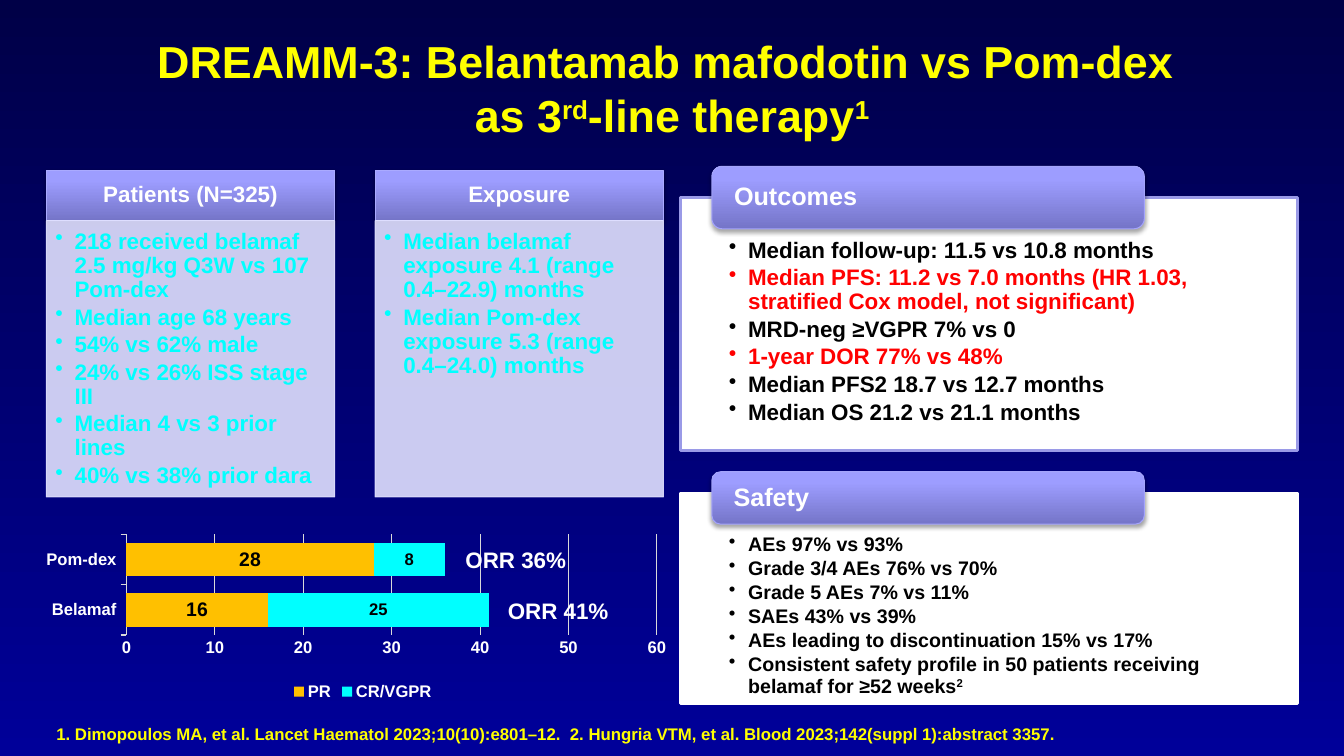
from copy import deepcopy
from dataclasses import dataclass

from lxml.etree import SubElement
from pptx import Presentation
from pptx.chart.data import CategoryChartData
from pptx.dml.color import RGBColor
from pptx.enum.chart import XL_CHART_TYPE, XL_LEGEND_POSITION, XL_TICK_MARK
from pptx.enum.shapes import MSO_SHAPE
from pptx.enum.text import MSO_ANCHOR, PP_ALIGN
from pptx.oxml import parse_xml
from pptx.oxml.ns import nsdecls, qn
from pptx.util import Inches, Pt


@dataclass(frozen=True)
class Theme:
    font: str = "Arial"
    yellow: str = "FFFF00"
    white: str = "FFFFFF"
    black: str = "000000"
    red: str = "FF0000"
    cyan: str = "00FFFF"
    amber: str = "FFC000"
    grid: str = "D9D9D9"
    lilac: str = "E2E2FF"
    card_edge: str = "9A9AE7"
    header_edge: str = "AAAAFF"
    tab_edge: str = "A4A4FB"
    header_stops: tuple = ((0, "7575C8"), (0.8, "9D9DFF"), (1, "9F9FFF"))
    sky_stops: tuple = ((0, "000047"), (1, "000099"))
    title: int = 32
    tab: int = 18
    body: int = 16
    small: int = 14
    note: int = 12


THEME = Theme()


def style_font(font, size, color):
    font.name = THEME.font
    font.size = Pt(size)
    font.bold = True
    font.color.rgb = RGBColor.from_string(color)


def paint_gradient(fill, owner, stops, angle):
    """Fill with any number of stops; owner is the XML element holding the fill."""
    fill.gradient()
    fill.gradient_angle = angle
    stop_list = owner.xpath(".//a:gsLst")[0]
    while len(stop_list) < len(stops):
        stop_list.append(deepcopy(stop_list[-1]))
    for stop, (position, color) in zip(fill.gradient_stops, stops):
        stop.color.rgb = RGBColor.from_string(color)
        stop.position = position


def set_line(line, color, width):
    line.color.rgb = RGBColor.from_string(color)
    line.width = Pt(width)


def add_bullet(para):
    properties = para._p.get_or_add_pPr()
    properties.set("marL", str(Inches(0.19)))
    properties.set("indent", str(-Inches(0.19)))
    SubElement(properties, qn("a:buChar"), char="•")


def add_text(para, text, size=THEME.body, color=THEME.white, align=PP_ALIGN.LEFT,
             bullet=False, line_spacing=None, after=0):
    """Write one paragraph; parts between ^ marks are raised."""
    if bullet:
        add_bullet(para)
    para.alignment = align
    para.line_spacing = line_spacing
    para.space_after = Pt(after)
    for number, line in enumerate(text.split("\n")):
        if number:
            para.add_line_break()
        for index, part in enumerate(line.split("^")):
            if not part:
                continue
            span = para.add_run()
            span.text = part
            style_font(span.font, size, color)
            if index % 2:
                span._r.get_or_add_rPr().set("baseline", "30000")


def set_frame(frame, insets, anchor):
    frame.word_wrap = True
    frame.vertical_anchor = anchor
    (frame.margin_left, frame.margin_top,
     frame.margin_right, frame.margin_bottom) = map(Inches, insets)


def add_bullets(box, items, insets, size, color):
    """Fill a box with bullets; an item starting with ! is shown in red."""
    frame = box.text_frame
    set_frame(frame, insets, MSO_ANCHOR.TOP)
    for index, item in enumerate(items):
        para = frame.add_paragraph() if index else frame.paragraphs[0]
        add_text(para, item.lstrip("!"), size=size, bullet=True, line_spacing=0.9,
                 color=THEME.red if item.startswith("!") else color, after=size * 0.15)


def add_box(slide, place, kind=MSO_SHAPE.RECTANGLE):
    box = slide.shapes.add_shape(kind, *map(Inches, place))
    box.shadow.inherit = False
    return box


def add_header(slide, place, text, kind, edge, size, align, insets):
    box = add_box(slide, place, kind)
    paint_gradient(box.fill, box._element.spPr, THEME.header_stops, 90)
    set_line(box.line, edge, 0.75)
    effects = box._element.spPr.find(qn("a:effectLst"))
    effects.append(parse_xml(
        f'<a:outerShdw {nsdecls("a")} blurRad="{Pt(3.1)}" dist="{Pt(1.8)}" dir="5400000"'
        ' rotWithShape="0"><a:srgbClr val="000000"><a:alpha val="35000"/></a:srgbClr>'
        '</a:outerShdw>'))
    set_frame(box.text_frame, insets, MSO_ANCHOR.MIDDLE)
    add_text(box.text_frame.paragraphs[0], text, size=size, align=align, line_spacing=0.9)


def add_column(slide, left, heading, items):
    add_header(slide, (left, 1.69, 2.86, 0.5), heading, MSO_SHAPE.RECTANGLE,
               THEME.header_edge, THEME.body, PP_ALIGN.CENTER, (0.12, 0.07, 0.12, 0.07))
    box = add_box(slide, (left, 2.19, 2.86, 2.74))
    box.fill.solid()
    box.fill.fore_color.rgb = RGBColor.from_string(THEME.lilac)
    set_line(box.line, THEME.lilac, 0.75)
    for color in box._element.spPr.iter(qn("a:srgbClr")):
        SubElement(color, qn("a:alpha"), val="90000")
    add_bullets(box, items, (0.09, 0.09, 0.12, 0.14), THEME.body, THEME.cyan)


def add_card(slide, top, height, tab_top, tab_height, heading, items, size, edge):
    box = add_box(slide, (6.75, top, 6.12, height))
    box.fill.solid()
    box.fill.fore_color.rgb = RGBColor.from_string(THEME.white)
    set_line(box.line, edge, 2)
    add_bullets(box, items, (0.48, 0.41, 0.48, 0.14), size, THEME.black)
    add_header(slide, (7.06, tab_top, 4.29, tab_height), heading,
               MSO_SHAPE.ROUNDED_RECTANGLE, THEME.tab_edge, THEME.tab,
               PP_ALIGN.LEFT, (0.19, 0.03, 0.19, 0.03))


def add_label(slide, place, text, anchor=MSO_ANCHOR.TOP, **text_format):
    box = slide.shapes.add_textbox(*map(Inches, place))
    set_frame(box.text_frame, (0.1, 0.05, 0.1, 0.05), anchor)
    add_text(box.text_frame.paragraphs[0], text, **text_format)


def set_plot_area(chart, **fractions):
    plot_area = chart._chartSpace.chart.plotArea
    for layout in plot_area.findall(qn("c:layout")):
        plot_area.remove(layout)
    values = "".join(f'<c:{key} val="{value:.3f}"/>' for key, value in fractions.items())
    plot_area.insert(0, parse_xml(
        f'<c:layout {nsdecls("c")}><c:manualLayout><c:layoutTarget val="inner"/>'
        f'<c:xMode val="edge"/><c:yMode val="edge"/>{values}</c:manualLayout></c:layout>'))


def add_response_chart(slide):
    width, height = 6.21, 1.8
    data = CategoryChartData()
    data.categories = ["Belamaf", "Pom-dex"]
    data.add_series("PR", (16, 28))
    data.add_series("CR/VGPR", (25, 8))
    chart = slide.shapes.add_chart(XL_CHART_TYPE.BAR_STACKED, Inches(0.46), Inches(5.19),
                                   Inches(width), Inches(height), data).chart
    style_font(chart.font, THEME.note, THEME.white)
    chart.has_title = False
    chart.has_legend = True
    chart.legend.position = XL_LEGEND_POSITION.BOTTOM
    chart.legend.include_in_layout = False
    style_font(chart.legend.font, THEME.note, THEME.white)

    plot = chart.plots[0]
    plot.gap_width = 50
    plot.overlap = 100
    plot.vary_by_categories = False
    looks = ((THEME.amber, THEME.small), (THEME.cyan, THEME.note))
    for series, (color, size) in zip(plot.series, looks):
        series.format.fill.solid()
        series.format.fill.fore_color.rgb = RGBColor.from_string(color)
        series.data_labels.show_value = True
        style_font(series.data_labels.font, size, THEME.black)

    groups, scale = chart.category_axis, chart.value_axis
    for axis, tick in ((groups, XL_TICK_MARK.OUTSIDE), (scale, XL_TICK_MARK.NONE)):
        axis.major_tick_mark = tick
        axis.minor_tick_mark = XL_TICK_MARK.NONE
        style_font(axis.tick_labels.font, THEME.note, THEME.white)
    set_line(groups.format.line, THEME.grid, 0.75)
    scale.format.line.fill.background()
    scale.minimum_scale, scale.maximum_scale, scale.major_unit = 0, 60, 10
    scale.has_major_gridlines = True
    set_line(scale.major_gridlines.format.line, THEME.grid, 0.75)
    set_plot_area(chart, x=0.73 / width, y=0.11 / height, w=5.32 / width, h=1 / height)


def main():
    deck = Presentation()
    deck.slide_width, deck.slide_height = Inches(13.33), Inches(7.5)
    slide = deck.slides.add_slide(deck.slide_layouts[6])
    paint_gradient(slide.background.fill, slide._element, THEME.sky_stops, 270)

    add_column(slide, 0.46, "Patients (N=325)", [
        "218 received belamaf 2.5 mg/kg Q3W vs 107 Pom-dex", "Median age 68 years",
        "54% vs 62% male", "24% vs 26% ISS stage III", "Median 4 vs 3 prior lines",
        "40% vs 38% prior dara"])
    add_column(slide, 3.72, "Exposure", [
        "Median belamaf exposure 4.1 (range 0.4–22.9) months",
        "Median Pom-dex exposure 5.3 (range 0.4–24.0) months"])
    add_card(slide, 1.96, 2.51, 1.65, 0.62, "Outcomes", [
        "Median follow-up: 11.5 vs 10.8 months",
        "!Median PFS: 11.2 vs 7.0 months (HR 1.03, stratified Cox model, not significant)",
        "MRD-neg ≥VGPR 7% vs 0", "!1-year DOR 77% vs 48%",
        "Median PFS2 18.7 vs 12.7 months", "Median OS 21.2 vs 21.1 months"],
        THEME.body, THEME.card_edge)
    add_card(slide, 4.89, 2.09, 4.68, 0.52, "Safety", [
        "AEs 97% vs 93%", "Grade 3/4 AEs 76% vs 70%", "Grade 5 AEs 7% vs 11%",
        "SAEs 43% vs 39%", "AEs leading to discontinuation 15% vs 17%",
        "Consistent safety profile in 50 patients receiving belamaf for ≥52 weeks^2^"],
        THEME.small, THEME.white)

    add_label(slide, (0, 0.31, 13.33, 1.12),
              "DREAMM-3: Belantamab mafodotin vs Pom-dex \nas 3^rd^-line therapy^1^",
              MSO_ANCHOR.MIDDLE, size=THEME.title, color=THEME.yellow, align=PP_ALIGN.CENTER)
    add_label(slide, (0.46, 7.02, 12.41, 0.41),
              "1. Dimopoulos MA, et al. Lancet Haematol 2023;10(10):e801–12.  "
              "2. Hungria VTM, et al. Blood 2023;142(suppl 1):abstract 3357.",
              MSO_ANCHOR.BOTTOM, size=THEME.note, color=THEME.yellow)
    add_response_chart(slide)
    for left, top, rate in ((4.17, 5.37, "ORR 36%"), (4.59, 5.88, "ORR 41%")):
        add_label(slide, (left, top, 1.89, 0.37), rate, align=PP_ALIGN.CENTER)
    deck.save("out.pptx")


if __name__ == "__main__":
    main()
